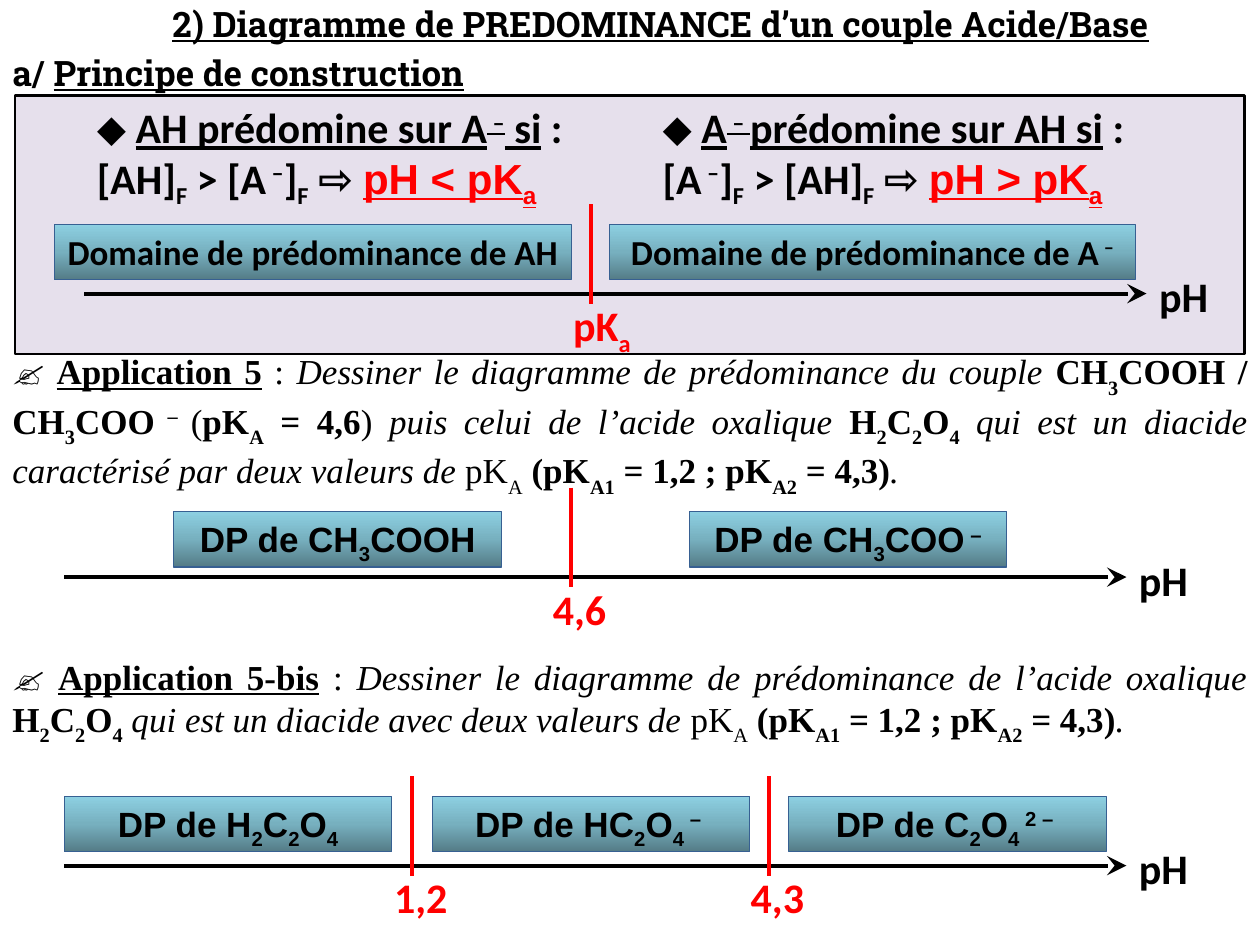
from copy import deepcopy
from dataclasses import dataclass, replace
from typing import NamedTuple, Optional

from lxml.etree import SubElement
from pptx import Presentation
from pptx.dml.color import RGBColor
from pptx.enum.shapes import MSO_CONNECTOR, MSO_SHAPE
from pptx.enum.text import MSO_ANCHOR, MSO_AUTO_SIZE, PP_ALIGN
from pptx.oxml.ns import qn
from pptx.util import Inches, Pt

BLACK = RGBColor(0x00, 0x00, 0x00)
RED = RGBColor(0xFF, 0x00, 0x00)
LAVENDER = RGBColor(0xE6, 0xE0, 0xEC)
BORDER_BLUE = RGBColor(0x37, 0x60, 0x92)
GRADIENT = (
    (0, RGBColor(0x54, 0x7B, 0x86)),
    (0.5, RGBColor(0x77, 0xB0, 0xBF)),
    (1, RGBColor(0x8D, 0xD0, 0xE2)),
)
SLIDE_WIDTH, SLIDE_HEIGHT = Inches(10), Inches(7.5)
COLUMNS, ROWS = 100, 75


class Area(NamedTuple):
    column: float
    row: float
    columns: float
    rows: float


@dataclass(frozen=True)
class Span:
    text: str
    bold: bool = False
    italic: bool = False
    underline: bool = False
    baseline: int = 0
    font: Optional[str] = None
    size: Optional[int] = None
    color: Optional[RGBColor] = None


@dataclass(frozen=True)
class TextStyle:
    font: str
    size: int
    color: RGBColor = BLACK
    align: PP_ALIGN = PP_ALIGN.LEFT
    wrap: bool = False
    anchor: MSO_ANCHOR = MSO_ANCHOR.TOP


class Domain(NamedTuple):
    column: float
    columns: float
    label: str


class Threshold(NamedTuple):
    column: float
    label: str


@dataclass(frozen=True)
class Diagram:
    start: float
    end: float
    axis_row: float
    box_rise: float
    font: str
    domains: tuple[Domain, ...]
    thresholds: tuple[Threshold, ...]


HEADING = TextStyle("Roboto Slab", 20, align=PP_ALIGN.JUSTIFY)
CONDITION = TextStyle("Calibri", 24, wrap=True)
AXIS_LABEL = TextStyle("Calibri", 24)
THRESHOLD_LABEL = replace(AXIS_LABEL, color=RED)
EXERCISE = TextStyle("Times New Roman", 20, align=PP_ALIGN.JUSTIFY, wrap=True, anchor=MSO_ANCHOR.MIDDLE)

DIAGRAMS = (
    Diagram(6.7, 91, 23.3, 5.5, "Calibri",
            (Domain(4.3, 41.05, "Domaine de prédominance de AH"),
             Domain(48.4, 41.7, "Domaine de prédominance de A|^ –")),
            (Threshold(46.9, "pK|_a"),)),
    Diagram(5.1, 89.4, 45.8, 5.2, "Arial",
            (Domain(13.8, 26, "DP de CH|_3|COOH"),
             Domain(54.7, 25.2, "DP de CH|_3|COO|^ –")),
            (Threshold(45.3, "4,6"),)),
    Diagram(5.1, 89.4, 68.7, 5.5, "Arial",
            (Domain(5.1, 26, "DP de H|_2|C|_2|O|_4"),
             Domain(34.3, 25.2, "DP de HC|_2|O|_4|^ – "),
             Domain(62.6, 25.2, "DP de C|_2|O|_4|^ 2 – ")),
            (Threshold(32.7, "1,2"), Threshold(61, "4,3"))),
)


def across(columns: float) -> int:
    return round(SLIDE_WIDTH * columns / COLUMNS)


def down(rows: float) -> int:
    return round(SLIDE_HEIGHT * rows / ROWS)


def place(area: Area) -> tuple[int, int, int, int]:
    return across(area.column), down(area.row), across(area.columns), down(area.rows)


def rich(markup: str, subscript: int = -25, **looks) -> list[Span]:
    shifts = {"_": subscript, "^": 30}
    return [
        Span(piece.lstrip("_^"), baseline=shifts.get(piece[0], 0), **looks)
        for piece in markup.split("|")
    ]


def write(shape, style: TextStyle, *lines: list[Span]) -> None:
    frame = shape.text_frame
    frame.word_wrap = style.wrap
    frame.auto_size = MSO_AUTO_SIZE.SHAPE_TO_FIT_TEXT
    frame.vertical_anchor = style.anchor
    for index, line in enumerate(lines):
        para = frame.add_paragraph() if index else frame.paragraphs[0]
        para.alignment = style.align
        para.font.name = style.font
        para.font.size = Pt(style.size)
        para.font.color.rgb = style.color
        for span in line:
            run = para.add_run()
            run.text = span.text
            run.font.bold = span.bold
            run.font.italic = span.italic
            run.font.underline = span.underline
            if span.baseline:
                run.font._element.set("baseline", str(span.baseline * 1000))
            if span.font:
                run.font.name = span.font
            if span.size:
                run.font.size = Pt(span.size)
            if span.color is not None:
                run.font.color.rgb = span.color


def add_text(page, area: Area, style: TextStyle, *lines: list[Span]) -> None:
    write(page.shapes.add_textbox(*place(area)), style, *lines)


def add_box(page, area: Area, border: RGBColor, weight: float):
    box = page.shapes.add_shape(MSO_SHAPE.RECTANGLE, *place(area))
    box.shadow.inherit = False
    box.line.color.rgb = border
    box.line.width = Pt(weight)
    return box


def add_domain(page, area: Area, font: str, label: str) -> None:
    box = add_box(page, area, BORDER_BLUE, 0.75)
    box.fill.gradient()
    box.fill.gradient_angle = 90
    first_stop = next(box._element.spPr.iter(qn("a:gs")))
    first_stop.addnext(deepcopy(first_stop))
    for stop, (position, color) in zip(box.fill.gradient_stops, GRADIENT):
        stop.position = position
        stop.color.rgb = color
    write(box, TextStyle(font, 20, align=PP_ALIGN.CENTER, wrap=True), rich(label, bold=True))


def add_line(page, start: tuple[float, float], end: tuple[float, float],
             color: RGBColor, arrow: bool = False) -> None:
    line = page.shapes.add_connector(
        MSO_CONNECTOR.STRAIGHT, across(start[0]), down(start[1]), across(end[0]), down(end[1]))
    line.line.color.rgb = color
    line.line.width = Pt(2.25)
    if arrow:
        SubElement(line.line._get_or_add_ln(), qn("a:tailEnd"), type="stealth", w="lg", len="lg")
    SubElement(line._element.spPr, qn("a:effectLst"))


def add_diagram(page, diagram: Diagram) -> None:
    row = diagram.axis_row
    add_line(page, (diagram.start, row), (diagram.end, row), BLACK, arrow=True)
    add_text(page, Area(diagram.end, row - 2.3, 5.9, 5), AXIS_LABEL, rich("pH", bold=True))
    for domain in diagram.domains:
        add_domain(page, Area(domain.column, row - diagram.box_rise, domain.columns, 4.4),
                   diagram.font, domain.label)
    for threshold in diagram.thresholds:
        add_line(page, (threshold.column, row - 7.1), (threshold.column, row + 0.8), RED)
        add_text(page, Area(threshold.column - 2.4, row, 7, 5), THRESHOLD_LABEL,
                 rich(threshold.label, bold=True))


def add_condition(page, area: Area, title: str, larger: str, smaller: str, result: str) -> None:
    add_text(
        page, area, CONDITION,
        [Span("⬥ "), *rich(title, bold=True, underline=True), Span(" :", bold=True)],
        [*rich(f"{larger}| > {smaller}| ⇨", bold=True), Span(" ", font="Arial", size=20),
         *rich(result, bold=True, underline=True, font="Arial", color=RED)])


def add_exercise(page, area: Area, title: str, *body: list[Span]) -> None:
    line = [Span("✍ ", bold=True), Span(title, bold=True, underline=True), Span(" : ")]
    add_text(page, area, EXERCISE, line + [span for part in body for span in part])


def main() -> None:
    deck = Presentation()
    deck.slide_width, deck.slide_height = SLIDE_WIDTH, SLIDE_HEIGHT
    page = deck.slides.add_slide(deck.slide_layouts[6])

    panel = add_box(page, Area(1.2, 7.6, 97.6, 20.5), BLACK, 1.5)
    panel.fill.solid()
    panel.fill.fore_color.rgb = LAVENDER
    add_text(page, Area(12.7, -0.3, 87.5, 4.4), HEADING,
             rich("2) Diagramme de PREDOMINANCE d’un couple Acide/Base", bold=True, underline=True))
    add_text(page, Area(0, 3.6, 42.5, 4.4), HEADING,
             [Span("a/ ", bold=True), Span("Principe de construction", bold=True, underline=True)])

    acid, base = "[AH]|_F", "[A|^ –|]|_F"
    add_condition(page, Area(6.7, 7.6, 39.4, 9.1), "AH prédomine sur A|^ –| si", acid, base, "pH < pK|_a")
    add_condition(page, Area(51.6, 7.6, 40.9, 9.1), "A|^ – |prédomine sur AH si", base, acid, "pH > pK|_a")

    oxalic = rich("H|_2|C|_2|O|_4", -30, bold=True)
    constants = [*rich("pK|_A| ", -30), *rich("(pK|_A1| = 1,2 ; pK|_A2| = 4,3)", -30, bold=True),
                 Span(".", italic=True)]
    add_exercise(
        page, Area(0, 28.1, 100, 11.1), "Application 5",
        rich("Dessiner le diagramme de prédominance du couple ", italic=True),
        rich("CH|_3|COOH / CH|_3|COO|^ – ", -30, bold=True), [Span("(")],
        rich("pK|_A| = 4,6", -30, bold=True), [Span(") ")],
        rich("puis celui de l’acide oxalique ", italic=True), oxalic,
        rich(" qui est un diacide caractérisé par deux valeurs de ", italic=True), constants)
    add_exercise(
        page, Area(0, 51.8, 100, 7.7), "Application 5-bis",
        rich("Dessiner le diagramme de prédominance de l’acide oxalique ", italic=True), oxalic,
        rich(" qui est un diacide avec deux valeurs de ", italic=True), constants)

    for diagram in DIAGRAMS:
        add_diagram(page, diagram)
    deck.save("out.pptx")


if __name__ == "__main__":
    main()
